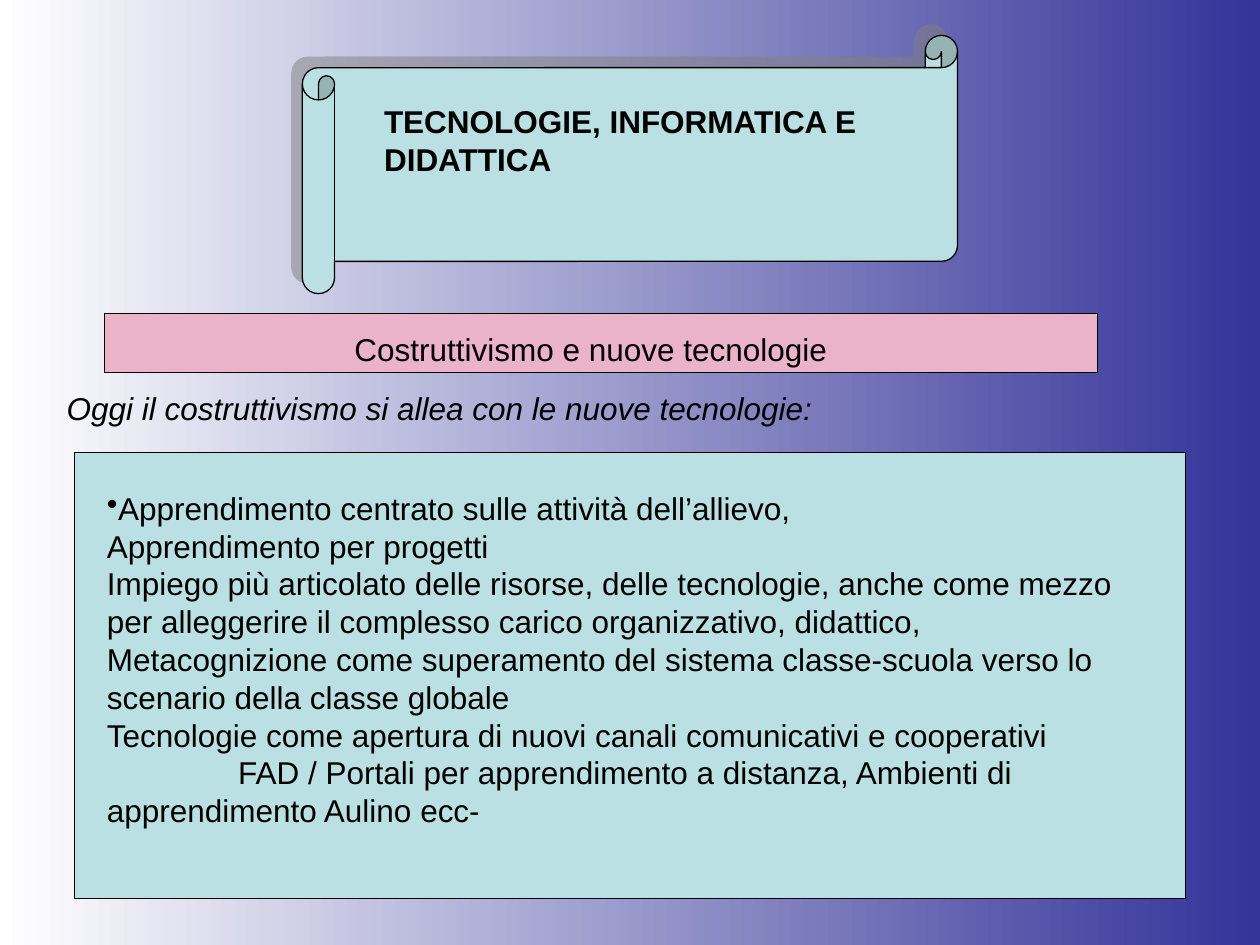
"""Build the slide on constructivism and new technologies."""
from lxml.etree import SubElement
from pptx import Presentation
from pptx.dml.color import RGBColor
from pptx.enum.shapes import MSO_SHAPE as Shape
from pptx.enum.text import PP_ALIGN as Align
from pptx.oxml.ns import qn
from pptx.util import Pt

COLORS = {
    "ink": "000000",
    "aqua": "BBE0E3",
    "pink": "EBB3CA",
    "shade": "808080",
    "start": "FFFFFF",
    "end": "333399",
}


def add_panel(kind, box, color):
    panel = slide.shapes.add_shape(kind, *map(Pt, box))
    panel.shadow.inherit = False
    panel.fill.solid()
    panel.fill.fore_color.rgb = RGBColor.from_string(COLORS[color])
    panel.line.color.rgb = RGBColor.from_string(COLORS["ink"])
    panel.line.width = Pt(0.75)
    return panel


def add_text(box, lines, align=Align.LEFT, **style):
    frame = slide.shapes.add_textbox(*map(Pt, box)).text_frame
    frame.word_wrap = True
    frame.text = "\n".join(lines)
    for paragraph in frame.paragraphs:
        paragraph.alignment = align
        paragraph.line_spacing = Pt(21.6)
        font = paragraph.runs[0].font
        font.color.rgb = RGBColor.from_string(COLORS["ink"])
        for key, value in {"name": "Arial", "size": Pt(18), **style}.items():
            setattr(font, key, value)
    return frame.paragraphs


deck = Presentation()
deck.slide_width, deck.slide_height = Pt(720), Pt(540)
slide = deck.slides.add_slide(deck.slide_layouts[6])

backdrop = slide.background.fill
backdrop.gradient()
backdrop.gradient_angle = 0
for stop, (color, position) in zip(backdrop.gradient_stops, [("start", 0), ("end", 1)]):
    stop.color.rgb = RGBColor.from_string(COLORS[color])
    stop.position = position

scroll = add_panel(Shape.HORIZONTAL_SCROLL, (172.8, 20.2, 374.4, 147.6), "aqua")
scroll.adjustments[0] = 0.125
effects = scroll._element.spPr.find(qn("a:effectLst"))
shadow = SubElement(effects, qn("a:outerShdw"), dist=str(Pt(8.5)), dir="13500000",
                    algn="ctr", rotWithShape="0")
shade = SubElement(shadow, qn("a:srgbClr"), val=COLORS["shade"])
SubElement(shade, qn("a:alpha"), val="50000")
add_text((212.4, 54.7, 311.8, 50.4), ["TECNOLOGIE, INFORMATICA E DIDATTICA"], bold=True)

add_panel(Shape.RECTANGLE, (59.6, 179.3, 567.4, 33.8), "pink")
add_text((105.1, 185, 465.1, 28.8), ["Costruttivismo e nuove tecnologie"], Align.CENTER)

add_panel(Shape.RECTANGLE, (42.5, 258.5, 635, 254.9), "aqua")
add_text((31, 218.9, 652.3, 28.8),
         ["Oggi il costruttivismo si allea con le nuove tecnologie:"], italic=True)

points = add_text((54, 275.8, 617.8, 201.6), [
    "Apprendimento centrato sulle attività dell’allievo,",
    "Apprendimento per progetti",
    "Impiego più articolato delle risorse, delle tecnologie, anche come mezzo "
    "per alleggerire il complesso carico organizzativo, didattico,",
    "Metacognizione come superamento del sistema classe-scuola verso lo "
    "scenario della classe globale",
    "Tecnologie come apertura di nuovi canali comunicativi e cooperativi",
    "FAD / Portali per apprendimento a distanza, Ambienti di apprendimento Aulino ecc-",
])
SubElement(points[0]._p.get_or_add_pPr(), qn("a:buChar"), char="•")
points[-1]._p.get_or_add_pPr().set("indent", str(Pt(75)))

deck.save("out.pptx")
